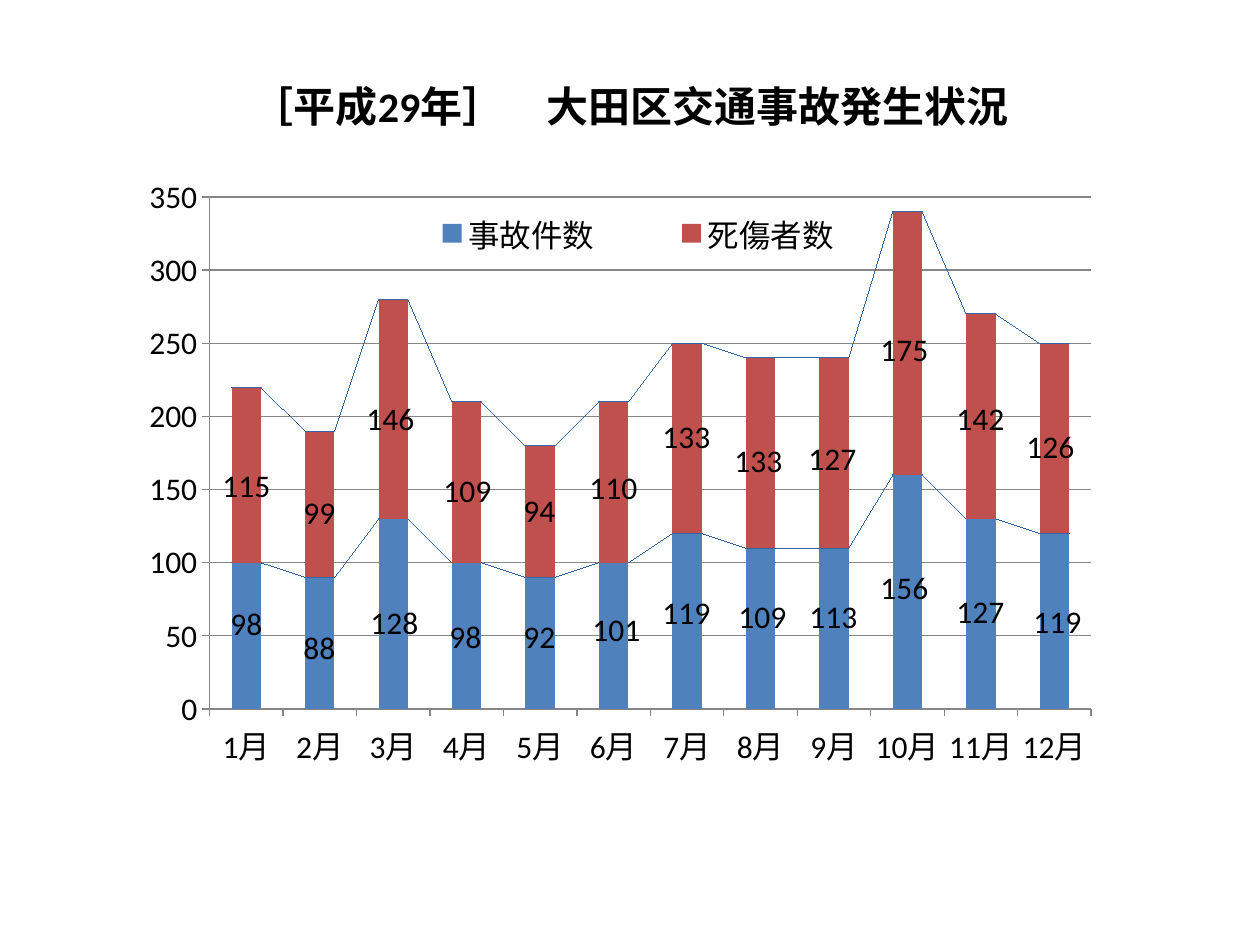
from pptx import Presentation
from pptx import util as u
from pptx.chart.data import CategoryChartData
from pptx.dml.color import RGBColor
from pptx.enum import chart as ch, text
from pptx.oxml import parse_xml
from pptx.oxml.ns import nsdecls, qn

THEME = {
    "font": "Calibri", "text": "000000", "grid": "868686", "link": "3A6EA5",
    "title_size": 24, "body_size": 18,
}
TITLE = "［平成29年］　大田区交通事故発生状況"
MONTHS = [f"{n}月" for n in range(1, 13)]
# Each point: value, label left, label top (px)
SERIES = [
    ("事故件数", "4F81BD", [
        (98, 218, 598), (88, 291, 622), (128, 358, 597), (98, 437, 611),
        (92, 511, 611), (101, 580, 604), (119, 650, 587), (109, 726, 591),
        (113, 797, 591), (156, 868, 562), (127, 944, 586), (119, 1021, 596)]),
    ("死傷者数", "C0504D", [
        (115, 210, 460), (99, 291, 487), (146, 354, 393), (109, 431, 465),
        (94, 511, 485), (110, 577, 462), (133, 650, 411), (133, 722, 435),
        (127, 796, 433), (175, 868, 324), (142, 944, 393), (126, 1014, 421)]),
]
TITLE_BOX = (35, 76, 1190, 59)
CHART_BOX = (94, 175, 1091, 630)
PLOT_BOX = (210, 197, 882, 512)
LEGEND_BOX = (366, 210, 546, 46)
LABEL_HEIGHT = 50


def px(n):
    return u.Emu(round(n * 914400 / 126))


def color(name):
    return RGBColor.from_string(THEME.get(name, name))


def set_font(font, size, bold=False):
    font.name, font.size, font.bold = THEME["font"], u.Pt(THEME[size]), bold
    font.color.rgb = color("text")


def chart_layout(box, inner=False):
    """Manual layout of a chart part, as fractions of the chart frame."""
    left, top, width, height = CHART_BOX
    x, y, w, h = box
    fractions = {"x": (x - left) / width, "y": (y - top) / height,
                 "w": w / width, "h": h / height}
    target = '<c:layoutTarget val="inner"/>' if inner else ""
    modes = "".join(f'<c:{k}Mode val="edge"/>' for k in "xy")
    sizes = "".join(f'<c:{k} val="{v:.3f}"/>' for k, v in fractions.items())
    return parse_xml(f'<c:layout {nsdecls("c")}><c:manualLayout>{target}{modes}'
                     f'{sizes}</c:manualLayout></c:layout>')


def add_series_lines(plot):
    lines = parse_xml(
        f'<c:serLines {nsdecls("c", "a")}><c:spPr><a:ln w="9525"><a:solidFill>'
        f'<a:srgbClr val="{THEME["link"]}"/></a:solidFill></a:ln></c:spPr></c:serLines>')
    plot._element.find(qn("c:axId")).addprevious(lines)


def add_chart(s):
    data = CategoryChartData()
    data.categories = MONTHS
    for name, _, points in SERIES:
        data.add_series(name, [round(value, -1) for value, _, _ in points])
    chart = s.shapes.add_chart(ch.XL_CHART_TYPE.COLUMN_STACKED,
                               *map(px, CHART_BOX), data).chart
    set_font(chart.font, "body_size")
    chart.has_title = False

    plot = chart.plots[0]
    plot.gap_width, plot.overlap, plot.vary_by_categories = 150, 100, False
    for series, (_, fill, _) in zip(plot.series, SERIES):
        series.format.fill.solid()
        series.format.fill.fore_color.rgb = color(fill)
    add_series_lines(plot)

    axis = chart.value_axis
    axis.minimum_scale, axis.maximum_scale, axis.major_unit = 0, 350, 50
    axis.has_major_gridlines = True
    for part in (axis, chart.category_axis, axis.major_gridlines):
        part.format.line.color.rgb = color("grid")
        part.format.line.width = u.Pt(0.75)
    for part in (axis, chart.category_axis):
        part.major_tick_mark = ch.XL_TICK_MARK.OUTSIDE

    chart.has_legend = True
    legend = chart.legend
    legend.position = ch.XL_LEGEND_POSITION.TOP
    legend.include_in_layout = True
    set_font(legend.font, "body_size")

    area = chart._chartSpace.chart.plotArea
    for parent in (area, legend._element):
        for old in parent.findall(qn("c:layout")):
            parent.remove(old)
    area.insert(0, chart_layout(PLOT_BOX, inner=True))
    legend._element.find(qn("c:legendPos")).addnext(chart_layout(LEGEND_BOX))


def add_label(s, value, left, top):
    width = 69 if value < 100 else 83
    tf = s.shapes.add_textbox(*map(px, (left, top, width, LABEL_HEIGHT))).text_frame
    tf.word_wrap = True
    p = tf.paragraphs[0]
    p.text = str(value)
    set_font(p.font, "body_size")


def main():
    prs = Presentation()
    prs.slide_width, prs.slide_height = px(1260), px(945)
    s = prs.slides.add_slide(prs.slide_layouts[5])

    title = s.shapes.title
    title.left, title.top, title.width, title.height = map(px, TITLE_BOX)
    tf = title.text_frame
    tf.vertical_anchor = text.MSO_ANCHOR.MIDDLE
    p = tf.paragraphs[0]
    p.text, p.alignment = TITLE, text.PP_ALIGN.CENTER
    set_font(p.font, "title_size", bold=True)

    add_chart(s)
    for _, _, points in SERIES:
        for point in points:
            add_label(s, *point)
    prs.save("out.pptx")


if __name__ == "__main__":
    main()
